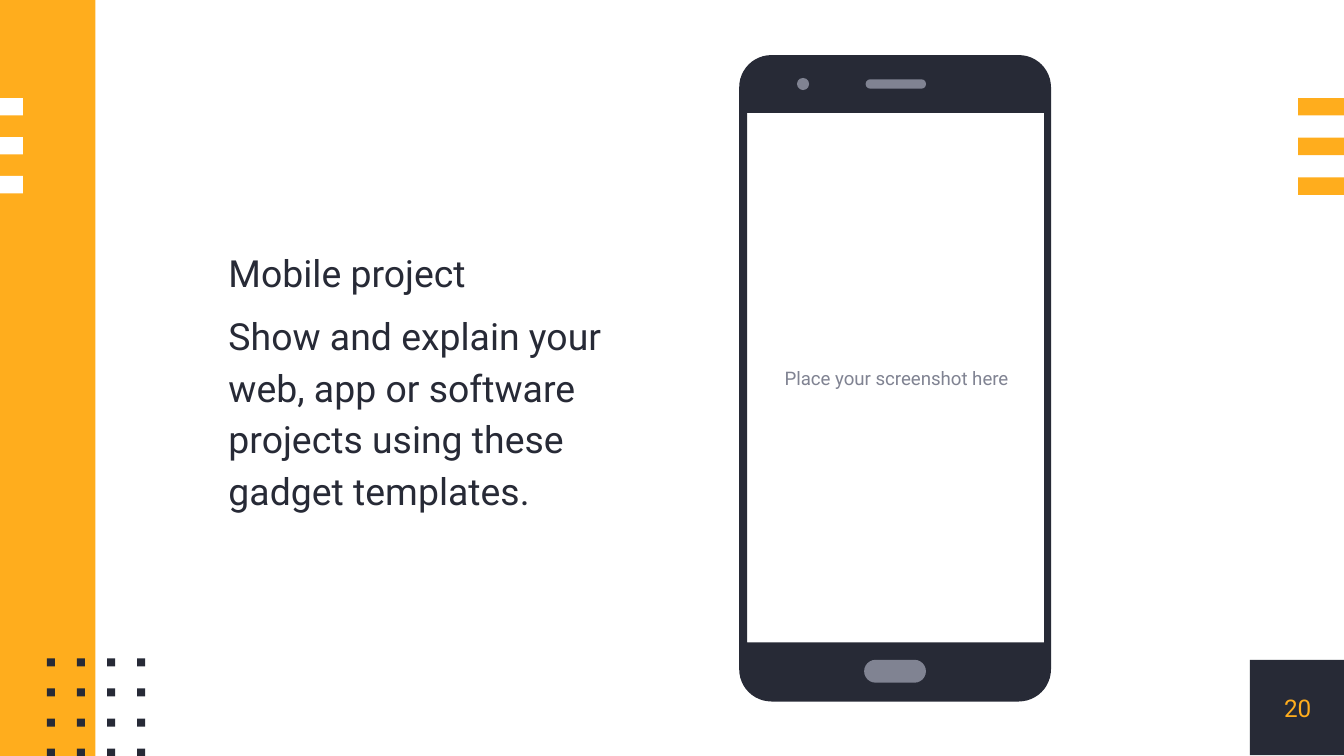
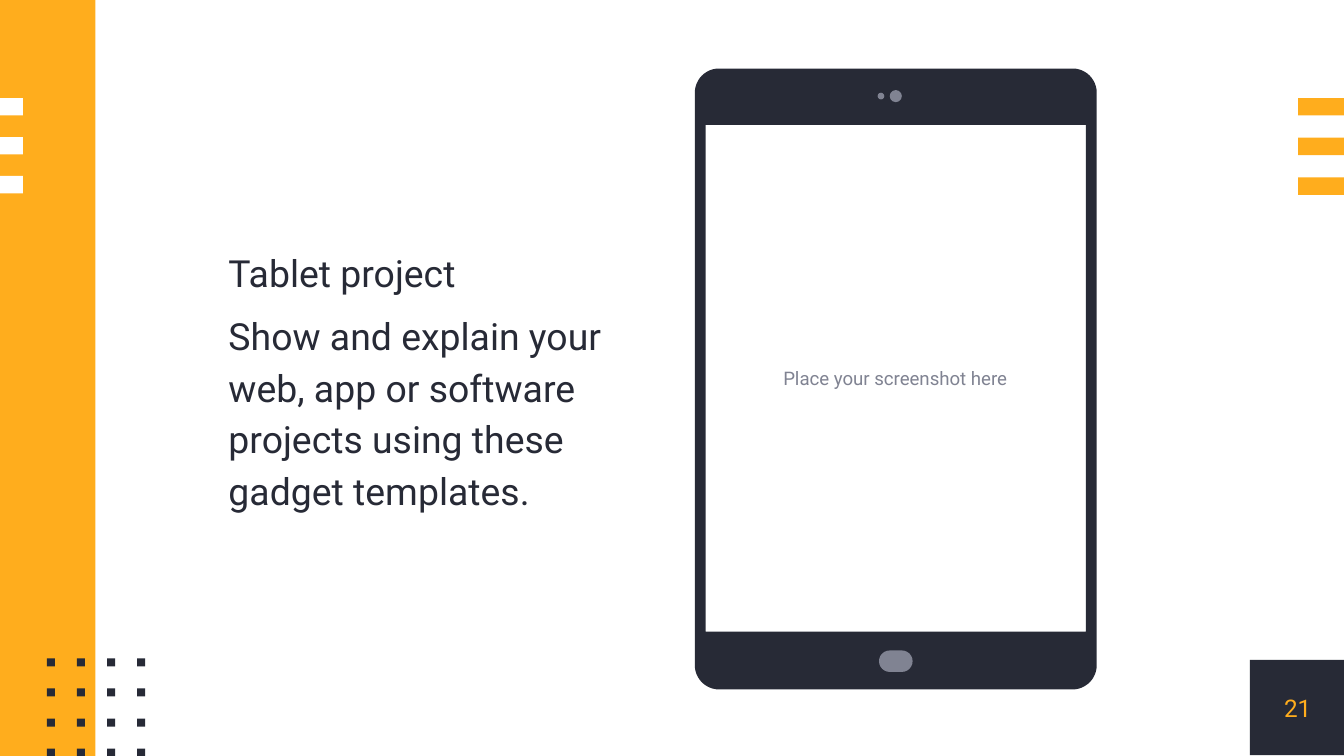
import math

import pptx
import pptx.dml.color
import pptx.enum.shapes
import pptx.enum.text
import pptx.oxml.ns
import pptx.util
from lxml import etree

Inches = pptx.util.Inches
SHAPE = pptx.enum.shapes.MSO_SHAPE
ALIGN = pptx.enum.text.PP_ALIGN
WIDTH = 10
HEIGHT = WIDTH * 9 / 16
FONT = "Roboto"
COLORS = {"dark": "272A36", "accent": "FFAD1D", "grey": "808392", "white": "FFFFFF"}

BODY_BOX = (1.7, 0.41, 3.11, 4.81)
BODY_PARA = {"line_spacing": 1.15, "space_before": pptx.util.Pt(6), "alignment": ALIGN.LEFT}
CENTERED = {"alignment": ALIGN.CENTER}
PITCH = "Show and explain your web, app or software projects using these gadget templates."
HINT = "Place your screenshot here"

PHONE = {
    "box": (5.5, 0.41, 2.32, 4.81),
    "radius": 0.24,
    "screen": (0.06, 0.43, 2.21, 3.94),
    "hint": (0.07, 0.45, 2.2, 3.91),
    "details": [
        (SHAPE.ROUNDED_RECTANGLE, (0.93, 4.5, 0.46, 0.17)),
        (SHAPE.OVAL, (0.43, 0.17, 0.09, 0.09)),
        (SHAPE.ROUNDED_RECTANGLE, (0.94, 0.18, 0.45, 0.07)),
    ],
}
TABLET = {
    "box": (5.17, 0.51, 2.99, 4.62),
    "radius": 0.18,
    "screen": (0.08, 0.42, 2.83, 3.77),
    "hint": (0.07, 0.42, 2.84, 3.76),
    "details": [
        (SHAPE.ROUNDED_RECTANGLE, (1.37, 4.33, 0.25, 0.16)),
        (SHAPE.OVAL, (1.36, 0.18, 0.05, 0.05)),
        (SHAPE.OVAL, (1.45, 0.16, 0.09, 0.09)),
    ],
}


def rgb(name):
    return pptx.dml.color.RGBColor.from_string(COLORS[name])


def paint(sp, color):
    sp.shadow.inherit = False
    sp.fill.solid()
    sp.fill.fore_color.rgb = rgb(color)
    sp.line.fill.background()


def add_block(s, kind, box, color):
    sp = s.shapes.add_shape(kind, *map(Inches, box))
    paint(sp, color)
    if kind == SHAPE.ROUNDED_RECTANGLE:
        sp.adjustments[0] = 0.5
    return sp


def write(tf, lines, size, color, para, inset=0):
    frame_format = {
        "word_wrap": True,
        "auto_size": pptx.enum.text.MSO_AUTO_SIZE.NONE,
        "vertical_anchor": pptx.enum.text.MSO_ANCHOR.MIDDLE,
    }
    for side in ("left", "top", "right", "bottom"):
        frame_format["margin_" + side] = Inches(inset)
    for name, value in frame_format.items():
        setattr(tf, name, value)
    for i, line in enumerate(lines):
        p = tf.add_paragraph() if i else tf.paragraphs[0]
        for name, value in para.items():
            setattr(p, name, value)
        r = p.add_run()
        r.text = line
        for name, value in {"name": FONT, "size": pptx.util.Pt(size)}.items():
            setattr(r.font, name, value)
        r.font.color.rgb = rgb(color)


def add_stripes(s, box, color):
    x, y, w, h = box
    stripe_h = 0.13
    for i in range(3):
        top = y + i * (h - stripe_h) / 2
        add_block(s, SHAPE.RECTANGLE, (x, top, w, stripe_h), color)


def add_dots(s, box):
    x, y, w, h = box
    dot = 0.06
    for row in range(4):
        for col in range(4):
            left, top = x + col * (w - dot) / 3, y + row * (h - dot) / 3
            add_block(s, SHAPE.RECTANGLE, (left, top, dot, dot), "dark")


def add_decoration(s, number):
    add_block(s, SHAPE.RECTANGLE, (0, 0, 0.71, HEIGHT), "accent")
    add_stripes(s, (0, 0.73, 0.17, 0.71), "white")
    add_dots(s, (0.35, 4.9, 0.73, 0.73))
    add_stripes(s, (9.66, 0.73, 0.34, 0.72), "accent")
    badge = add_block(s, SHAPE.RECTANGLE, (9.3, 4.91, 0.71, 0.71), "dark")
    write(badge.text_frame, [str(number)], 13, "accent", CENTERED)


def add_body(s, box, lines):
    title = s.shapes.title.element
    title.getparent().remove(title)
    body = s.placeholders[1]
    for name, value in zip(("left", "top", "width", "height"), box):
        setattr(body, name, Inches(value))
    write(body.text_frame, lines, 20, "dark", BODY_PARA)
    for p in body.text_frame.paragraphs:
        ppr = p._p.get_or_add_pPr()
        ppr.set("marL", "0")
        ppr.set("indent", "0")
        etree.SubElement(ppr, pptx.oxml.ns.qn("a:buNone"))


def rounded_outline(box, radius, steps=12):
    x, y, w, h = box
    corners = [
        (x + w - radius, y + radius, -90),
        (x + w - radius, y + h - radius, 0),
        (x + radius, y + h - radius, 90),
        (x + radius, y + radius, 180),
    ]
    points = []
    for cx, cy, start in corners:
        for i in range(steps + 1):
            angle = math.radians(start + 90 * i / steps)
            points.append((cx + radius * math.cos(angle), cy + radius * math.sin(angle)))
    return points


def add_frame(s, box, radius, screen):
    x, y, w, h = screen
    hole = [(x + w, y), (x + w, y + h), (x, y + h), (x, y)]
    outer = [tuple(map(Inches, pt)) for pt in rounded_outline(box, radius)]
    inner = [tuple(map(Inches, pt)) for pt in hole]
    builder = s.shapes.build_freeform(*inner[0])
    builder.add_line_segments(inner[1:], close=True)
    builder.move_to(*outer[0])
    builder.add_line_segments(outer[1:], close=True)
    paint(builder.convert_to_shape(), "dark")


def add_device(s, box, radius, screen, hint, details):
    def inside(part):
        return (box[0] + part[0], box[1] + part[1], part[2], part[3])

    label = s.shapes.add_textbox(*map(Inches, inside(hint)))
    write(label.text_frame, [HINT], 10, "grey", CENTERED, inset=0.1)
    add_frame(s, box, radius, inside(screen))
    for kind, part in details:
        add_block(s, kind, inside(part), "grey")


def add_project_slide(prs, number, name, device):
    s = prs.slides.add_slide(prs.slide_layouts[1])
    s.background.fill.solid()
    s.background.fill.fore_color.rgb = rgb("white")
    add_body(s, BODY_BOX, [name, PITCH])
    add_decoration(s, number)
    add_device(s, **device)


def main():
    prs = pptx.Presentation()
    prs.slide_width, prs.slide_height = Inches(WIDTH), Inches(HEIGHT)
    add_project_slide(prs, 20, "Mobile project", PHONE)
    add_project_slide(prs, 21, "Tablet project", TABLET)
    prs.save("out.pptx")


if __name__ == "__main__":
    main()
